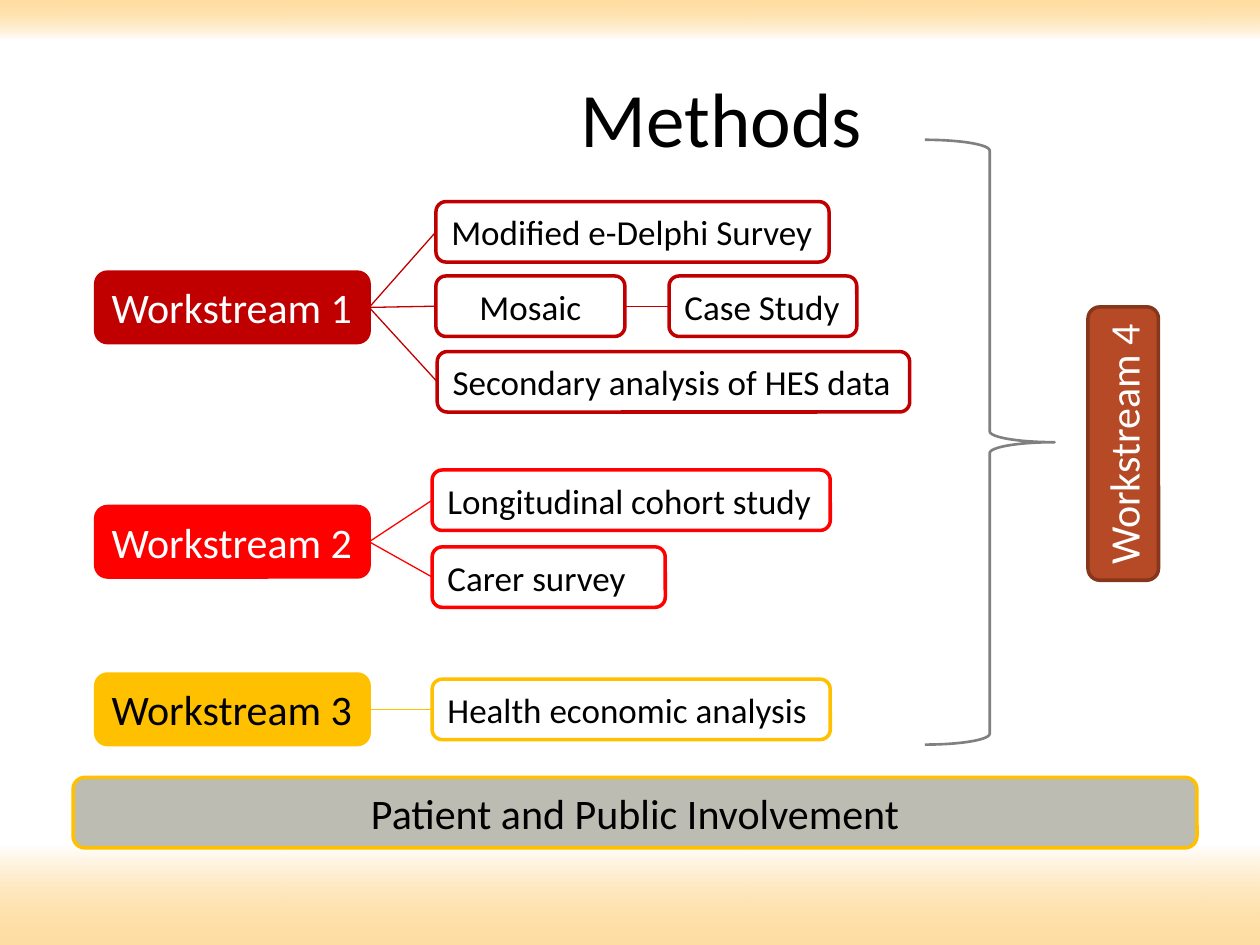
"""Build the Methods slide: four workstreams, their studies and public involvement."""
from dataclasses import dataclass
from typing import Optional

from lxml.etree import SubElement
from pptx import Presentation
from pptx.dml.color import RGBColor
from pptx.enum.shapes import MSO_CONNECTOR, MSO_SHAPE
from pptx.enum.text import MSO_ANCHOR, MSO_AUTO_SIZE, PP_ALIGN
from pptx.oxml.ns import qn
from pptx.util import Inches, Pt

COLOURS = {
    "white": "FFFFFF", "black": "000000", "apricot": "FFBD47", "crimson": "C00000",
    "red": "FF0000", "amber": "FFC000", "rust": "B64926", "dark_rust": "87361C",
    "stone": "BCBCB2", "grey": "808080",
}
FONT = "Calibri"
LEFT, TOP, RIGHT, BOTTOM = 1, 0, 3, 2
WORKSTREAM_SIZE = (2.17, 0.56)
STUDY_HEIGHT = 0.48


@dataclass
class Box:
    text: str
    left: float
    top: float
    width: float
    height: float
    line: str
    fill: Optional[str] = "white"
    colour: str = "black"
    size: int = 20
    wrap: bool = False
    centred: bool = False
    rotation: int = 0


@dataclass
class Study:
    text: str
    left: float
    top: float
    width: float
    wrap: bool = False
    centred: bool = False


@dataclass
class Workstream:
    text: str
    top: float
    fill: str
    colour: str
    studies: list[Study]


WORKSTREAMS = [
    Workstream("Workstream 1", 2.16, "crimson", "white", [
        Study("Modified e-Delphi Survey", 3.46, 1.6, 3.12),
        Study("Mosaic", 3.46, 2.19, 1.5, wrap=True, centred=True),
        Study("Secondary analysis of HES data", 3.47, 2.79, 3.75),
    ]),
    Workstream("Workstream 2", 4.02, "red", "white", [
        Study("Longitudinal cohort study", 3.43, 3.73, 3.16, wrap=True),
        Study("Carer survey", 3.43, 4.34, 1.85, wrap=True),
    ]),
    Workstream("Workstream 3", 5.35, "amber", "black", [
        Study("Health economic analysis", 3.43, 5.39, 3.16, wrap=True),
    ]),
]
CASE_STUDY = Study("Case Study", 5.31, 2.19, 1.49)


def rgb(name: str) -> RGBColor:
    return RGBColor.from_string(COLOURS[name])


def write_text(frame, text: str, size: int, colour: str, centred: bool) -> None:
    paragraph = frame.paragraphs[0]
    paragraph.alignment = PP_ALIGN.CENTER if centred else PP_ALIGN.LEFT
    run = paragraph.add_run()
    run.text = text
    run.font.name = FONT
    run.font.size = Pt(size)
    run.font.color.rgb = rgb(colour)


def add_band(slide, top: float, height: float, stops: tuple[str, str]) -> None:
    shape = slide.shapes.add_shape(
        MSO_SHAPE.FLOWCHART_PROCESS, 0, Inches(top), Inches(10), Inches(height))
    shape.shadow.inherit = False
    shape.line.fill.background()
    shape.fill.gradient()
    shape.fill.gradient_angle = 270
    for stop, name in zip(shape.fill.gradient_stops, stops):
        stop.color.rgb = rgb(name)
    for colour in shape.element.spPr.iter(qn("a:srgbClr")):
        if colour.get("val") == COLOURS["apricot"]:
            SubElement(colour, qn("a:alpha"), val="50000")


def add_box(slide, box: Box):
    shape = slide.shapes.add_shape(
        MSO_SHAPE.ROUNDED_RECTANGLE, Inches(box.left), Inches(box.top),
        Inches(box.width), Inches(box.height))
    shape.shadow.inherit = False
    shape.rotation = box.rotation
    if box.fill:
        shape.fill.solid()
        shape.fill.fore_color.rgb = rgb(box.fill)
    else:
        shape.fill.background()
    shape.line.color.rgb = rgb(box.line)
    shape.line.width = Pt(2)
    frame = shape.text_frame
    frame.word_wrap = box.wrap
    frame.auto_size = MSO_AUTO_SIZE.SHAPE_TO_FIT_TEXT
    frame.vertical_anchor = MSO_ANCHOR.TOP
    write_text(frame, box.text, box.size, box.colour, box.centred)
    return shape


def add_study(slide, study: Study, line: str):
    fill = None if line == "amber" else "white"
    return add_box(slide, Box(
        study.text, study.left, study.top, study.width, STUDY_HEIGHT, line, fill,
        wrap=study.wrap, centred=study.centred))


def join(slide, source, target, colour: str) -> None:
    connector = slide.shapes.add_connector(MSO_CONNECTOR.STRAIGHT, 0, 0, 0, 0)
    connector.begin_connect(source, RIGHT)
    connector.end_connect(target, LEFT)
    connector.line.color.rgb = rgb(colour)
    connector.line.width = Pt(0.75)
    SubElement(connector.element.spPr, qn("a:effectLst"))


def add_brace(slide) -> None:
    brace = slide.shapes.add_shape(
        MSO_SHAPE.RIGHT_BRACE, Inches(7.34), Inches(1.11), Inches(1.03), Inches(4.8))
    brace.shadow.inherit = False
    brace.fill.background()
    brace.line.color.rgb = rgb("grey")
    brace.line.width = Pt(1.5)


def add_title(slide, text: str) -> None:
    title = slide.shapes.add_textbox(Inches(1.95), Inches(0.3), Inches(7.55), Inches(1.25))
    title.text_frame.word_wrap = True
    title.text_frame.vertical_anchor = MSO_ANCHOR.MIDDLE
    write_text(title.text_frame, text, 44, "black", True)


def main() -> None:
    presentation = Presentation()
    presentation.slide_width, presentation.slide_height = Inches(10), Inches(7.5)
    slide = presentation.slides.add_slide(presentation.slide_layouts[6])
    add_band(slide, 6.7, 0.82, ("white", "apricot"))
    add_band(slide, 0, 0.31, ("apricot", "white"))
    add_title(slide, "Methods")
    shapes = {}
    for stream in WORKSTREAMS:
        source = add_box(slide, Box(
            stream.text, 0.76, stream.top, *WORKSTREAM_SIZE, stream.fill, stream.fill,
            stream.colour, 24))
        for study in stream.studies:
            shapes[study.text] = add_study(slide, study, stream.fill)
            join(slide, source, shapes[study.text], stream.fill)
    case_study = add_study(slide, CASE_STUDY, "crimson")
    join(slide, shapes["Mosaic"], case_study, "crimson")
    add_brace(slide)
    add_box(slide, Box("Workstream 4", 7.83, 3.24, *WORKSTREAM_SIZE, "dark_rust", "rust",
                       "white", 24, rotation=270))
    add_box(slide, Box("Patient and Public Involvement", 0.58, 6.17, 8.92, 0.56, "amber",
                       "stone", size=24, wrap=True, centred=True))
    presentation.save("out.pptx")


if __name__ == "__main__":
    main()
